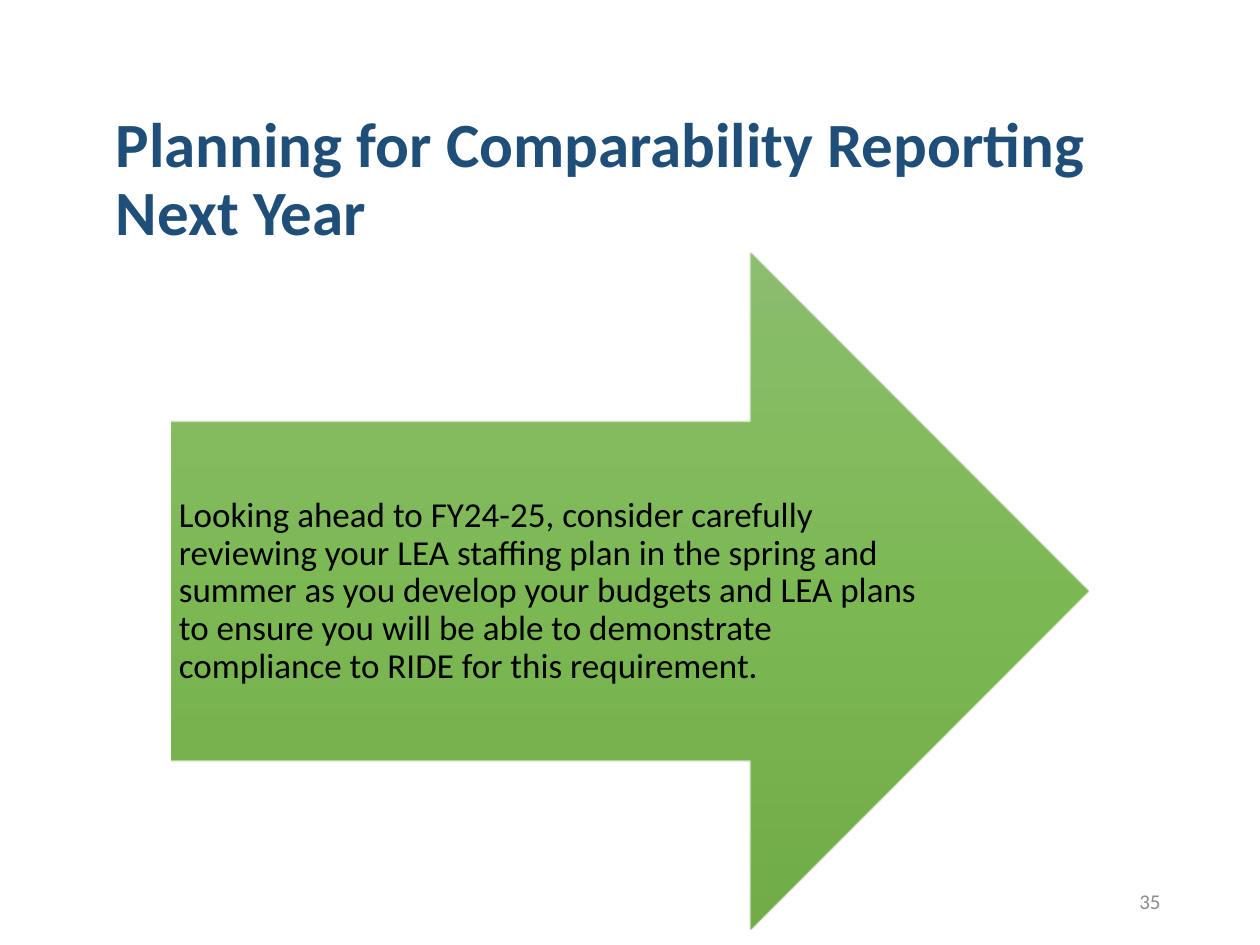
from lxml import etree
from pptx import Presentation
from pptx.dml.color import RGBColor
from pptx.enum import shapes, text
from pptx.oxml.ns import qn
from pptx.util import Inches, Pt

FONT = "Calibri"
NAVY = RGBColor(0x1F, 0x4E, 0x79)
BLACK = RGBColor(0x00, 0x00, 0x00)
GRAY = RGBColor(0x8C, 0x8C, 0x8C)
GREENS = [
    RGBColor(0x81, 0xB8, 0x61),
    RGBColor(0x6F, 0xB2, 0x42),
    RGBColor(0x62, 0xA3, 0x36),
]
OPACITY = 90

MESSAGE = (
    "Looking ahead to FY24-25, consider carefully reviewing your LEA staffing "
    "plan in the spring and summer as you develop your budgets and LEA plans to "
    "ensure you will be able to demonstrate compliance to RIDE for this requirement."
)


def write(shape, words, size, color, bold=False, align=text.PP_ALIGN.LEFT, spacing=1.0):
    """Fill a shape with one wrapped, vertically centred paragraph."""
    frame = shape.text_frame
    frame.word_wrap = True
    frame.auto_size = text.MSO_AUTO_SIZE.NONE
    frame.vertical_anchor = text.MSO_ANCHOR.MIDDLE
    frame.text = words
    para = frame.paragraphs[0]
    para.alignment = align
    para.line_spacing = spacing
    para.font.name = FONT
    para.font.size = Pt(size)
    para.font.bold = bold
    para.font.color.rgb = color
    return frame


def shade(shape, colors):
    """Apply an evenly stepped, slightly transparent gradient from top to bottom."""
    shape.fill.gradient()
    shape.fill.gradient_angle = 270
    stops = shape.element.spPr.find(".//" + qn("a:gsLst"))
    for stop in list(stops):
        stops.remove(stop)
    for index, color in enumerate(colors):
        position = 100000 * index // (len(colors) - 1)
        stop = etree.SubElement(stops, qn("a:gs"), pos=str(position))
        tint = etree.SubElement(stop, qn("a:srgbClr"), val=str(color))
        etree.SubElement(tint, qn("a:alpha"), val=str(OPACITY * 1000))


def place_title(page, left, top, width, height):
    title = page.shapes.title
    title.left, title.top, title.width, title.height = left, top, width, height
    write(title, "Planning for Comparability Reporting Next Year", 36, NAVY,
          bold=True, spacing=0.9)


def add_message_arrow(page, left, top, width, height):
    # Green arrow
    arrow = page.shapes.add_shape(
        shapes.MSO_SHAPE.RIGHT_ARROW, left, top, width, height)
    arrow.shadow.inherit = False
    arrow.line.fill.background()
    shade(arrow, GREENS)

    # Message across the shaft and into the head
    box_height = Inches(2.27)
    box = page.shapes.add_textbox(
        left + Inches(0.06), top + (height - box_height) // 2,
        Inches(5.96), box_height)
    frame = write(box, MESSAGE, 20, BLACK, spacing=0.9)
    frame.margin_left = frame.margin_right = 0
    frame.margin_top = frame.margin_bottom = Inches(0.22)


def add_page_number(page, left, top, width, height):
    box = page.shapes.add_textbox(left, top, width, height)
    write(box, "35", 12, GRAY, align=text.PP_ALIGN.RIGHT)


def main():
    deck = Presentation()
    deck.slide_width, deck.slide_height = Inches(10), Inches(7.5)
    page = deck.slides.add_slide(deck.slide_layouts.get_by_name("Title Only"))
    place_title(page, Inches(0.82), Inches(0.86), Inches(8.62), Inches(1.15))
    add_message_arrow(page, Inches(1.36), Inches(2.01), Inches(7.28), Inches(5.37))
    add_page_number(page, Inches(7.06), Inches(6.95), Inches(2.25), Inches(0.4))
    deck.save("out.pptx")


if __name__ == "__main__":
    main()
